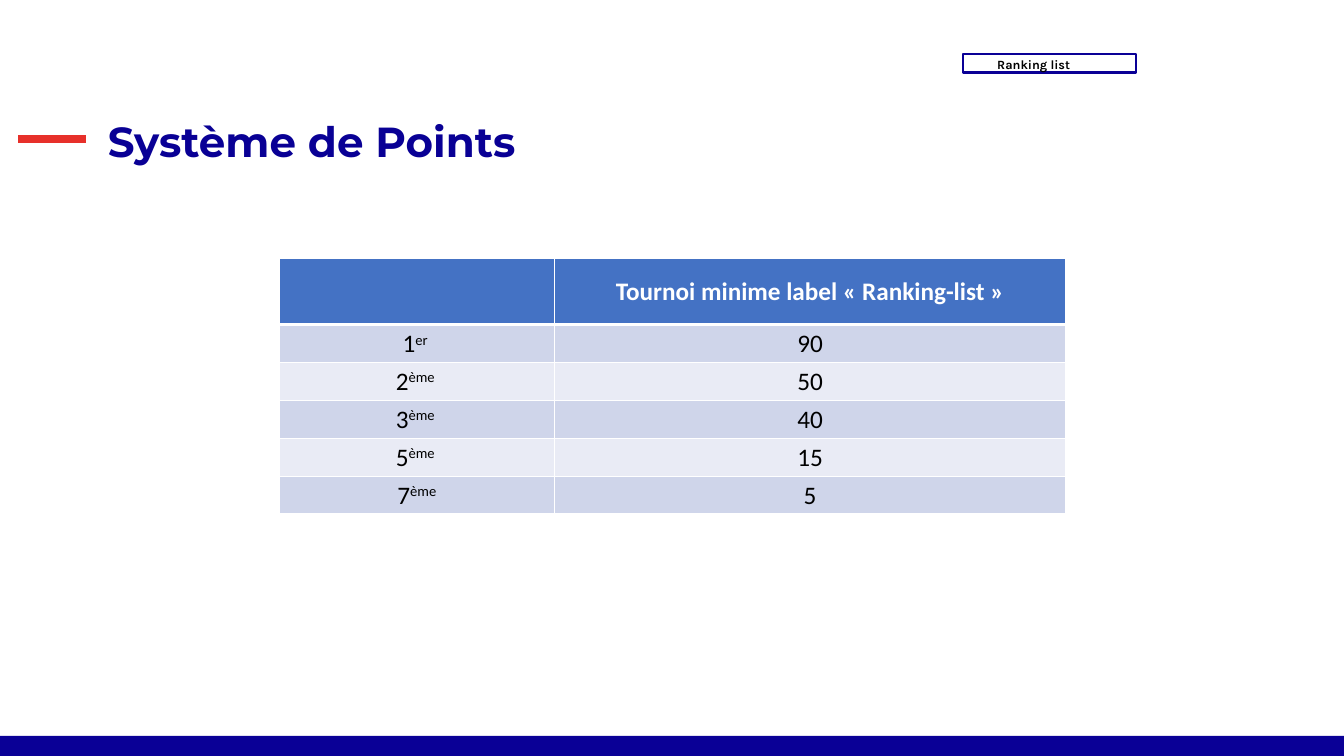
from lxml.etree import SubElement as Sub
from pptx import Presentation
from pptx.dml.color import RGBColor as Rgb
from pptx.enum.shapes import MSO_CONNECTOR as Link, MSO_SHAPE as Shape
from pptx.enum.text import MSO_ANCHOR as Anchor, MSO_AUTO_SIZE as Fit, PP_ALIGN as Align
from pptx.oxml.ns import qn
from pptx.util import Inches, Pt

HUES = {
    "navy": "0A0096", "title": "090095", "red": "E7302A", "head": "4472C4",
    "odd": "CFD5EA", "even": "E9EBF5", "white": "FFFFFF", "black": "000000",
}
RANKS = [("1", "er ", "90"), ("2", "ème ", "50"), ("3", "ème ", "40"),
         ("5", "ème ", "15"), ("7", "ème", "5")]


def hue(name):
    """Return the named colour."""
    return Rgb.from_string(HUES[name])


def style(run, size, face, tint, bold=False):
    """Set the font of a run."""
    font = run.font
    font.size, font.name, font.bold = Pt(size), face, bold
    font.color.rgb = hue(tint)


def pad(frame, *sides):
    """Set the left, top, right and bottom insets of a frame."""
    frame.margin_left, frame.margin_top, frame.margin_right, frame.margin_bottom = map(Inches, sides)


def block(slide, box):
    """Add a plain rectangle without shadow."""
    shape = slide.shapes.add_shape(Shape.RECTANGLE, *map(Inches, box))
    shape.shadow.inherit = False
    return shape


def footer(slide, box):
    """Draw the band along the bottom."""
    band = block(slide, box)
    band.fill.solid()
    band.fill.fore_color.rgb = hue("navy")
    band.line.fill.background()


def label(slide, box):
    """Draw the framed label at the top right."""
    tag = block(slide, box)
    tag.fill.background()
    tag.line.color.rgb = hue("navy")
    tag.line.width = Pt(1.5)
    frame = tag.text_frame
    pad(frame, 0, 0, 0, 0)
    frame.word_wrap = True
    frame.vertical_anchor = Anchor.TOP
    para = frame.paragraphs[0]
    para.text = "Ranking list"
    para.alignment = Align.LEFT
    para.line_spacing = 1.15
    para.space_after = Pt(8)
    props = para._p.get_or_add_pPr()
    props.set("marL", str(Inches(0.67)))
    props.set("indent", str(Inches(-0.33)))
    style(para.runs[0], 9, "Karla", "black", True)


def heading(slide, box):
    """Place the title with the red dash on its left."""
    left, top, width, height = box
    y = Inches(top + 0.31)
    dash = slide.shapes.add_connector(Link.STRAIGHT, Inches(left - 0.89), y, Inches(left - 0.22), y)
    dash.line.color.rgb = hue("red")
    dash.line.width = Pt(6)
    Sub(dash._element.spPr, qn("a:effectLst"))
    title = slide.shapes.title
    title.left, title.top, title.width, title.height = map(Inches, box)
    frame = title.text_frame
    frame.text = "Système de Points"
    frame.word_wrap = True
    frame.auto_size = Fit.NONE
    frame.vertical_anchor = Anchor.BOTTOM
    pad(frame, 0, 0, 0, 0)
    para = frame.paragraphs[0]
    para.alignment = Align.LEFT
    para.line_spacing = 0.9
    style(para.runs[0], 30, "Montserrat", "title", True)


def border(cell, top, bottom):
    """Draw white borders, with the given top and bottom widths."""
    props = cell._tc.get_or_add_tcPr()
    for side, width in (("L", 1), ("R", 1), ("T", top), ("B", bottom)):
        line = Sub(props, qn("a:ln" + side), w=str(Pt(width)))
        Sub(Sub(line, qn("a:solidFill")), qn("a:srgbClr"), val=HUES["white"])


def points(slide, box):
    """Build the table of points by rank."""
    left, top, width, height = box
    rows = [("", "", "Tournoi minime label « Ranking-list »")] + RANKS
    table = slide.shapes.add_table(len(rows), 2, *map(Inches, box)).table
    table.columns[0].width = Inches(2.73)
    table.columns[1].width = Inches(width - 2.73)
    first = 0.66
    step = (height - first) / len(RANKS)
    for i, (rank, suffix, score) in enumerate(rows):
        head = i == 0
        table.rows[i].height = Inches(first if head else step)
        fill = "head" if head else "odd" if i % 2 else "even"
        for j, parts in enumerate([(rank, suffix), (score,)]):
            cell = table.cell(i, j)
            border(cell, 3 if i == 1 else 1, 3 if head else 1)
            cell.fill.solid()
            cell.fill.fore_color.rgb = hue(fill)
            cell.vertical_anchor = Anchor.MIDDLE
            pad(cell, 0.01, 0.01, 0.01, 0)
            para = cell.text_frame.paragraphs[0]
            para.alignment = Align.CENTER
            for k, text in enumerate(parts):
                if text:
                    run = para.add_run()
                    run.text = text
                    style(run, 18, "Calibri", "white" if head else "black", head)
                    if k:
                        run._r.get_or_add_rPr().set("baseline", "30000")


def main():
    """Build and save the slide."""
    deck = Presentation()
    deck.slide_width, deck.slide_height = Inches(13.33), Inches(7.5)
    slide = deck.slides.add_slide(deck.slide_layouts[5])
    footer(slide, (0, 7.3, 13.33, 0.2))
    label(slide, (9.55, 0.54, 1.72, 0.18))
    heading(slide, (1.07, 1.07, 10.84, 0.58))
    points(slide, (2.77, 2.56, 7.8, 2.54))
    deck.save("out.pptx")


if __name__ == "__main__":
    main()
